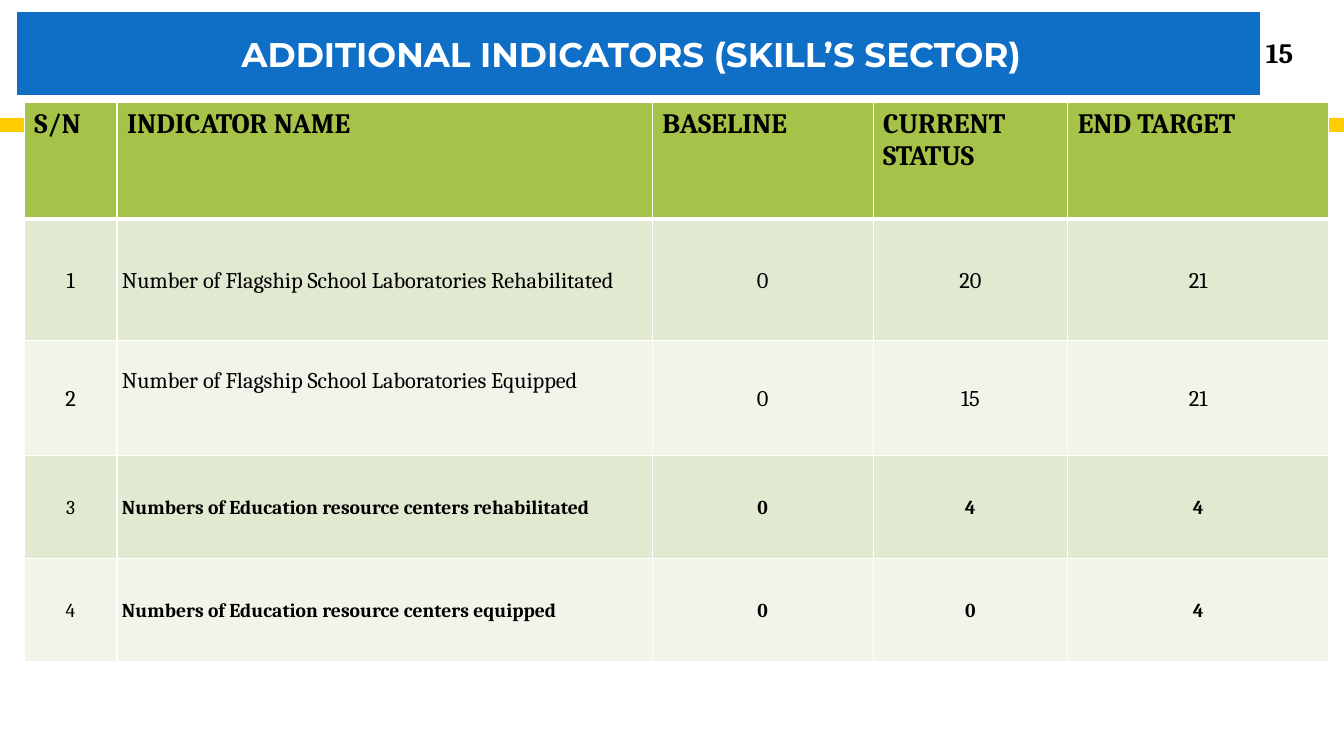
"""Build the additional indicators slide for the skills sector."""
from lxml.etree import SubElement
from pptx import Presentation
from pptx.dml.color import RGBColor
from pptx.enum.shapes import MSO_SHAPE
from pptx.enum.text import MSO_ANCHOR, PP_ALIGN
from pptx.oxml.ns import qn
from pptx.util import Inches, Pt

COLORS = {
    "white": "FFFFFF", "black": "000000", "blue": "0F6FC6", "yellow": "FFCC00",
    "header": "A5C249", "odd": "E1E9D0", "even": "F0F4E9",
}
HEADERS = ["S/N", "INDICATOR NAME", "BASELINE", "CURRENT STATUS", "END TARGET"]
INDICATORS = [
    ("Number of Flagship School Laboratories Rehabilitated", "0", "20", "21"),
    ("Number of Flagship School Laboratories Equipped", "0", "15", "21"),
    ("Numbers of Education resource centers rehabilitated", "0", "4", "4"),
    ("Numbers of Education resource centers equipped", "0", "0", "4"),
]
COLUMN_WIDTHS = [0.92, 5.31, 2.19, 1.93, 2.59]
ROW_HEIGHTS = [1.15, 1.21, 1.14, 1.02, 1.02]
NAME_COLUMN, BASELINE_COLUMN = 1, 2
RAISED_ROW = 2


def color(name):
    return RGBColor.from_string(COLORS[name])


def write_text(text_frame, text, size, font="Cambria", fill="black", bold=True,
               align=PP_ALIGN.CENTER):
    text_frame.text = text
    paragraph = text_frame.paragraphs[0]
    paragraph.alignment = align
    run_font = paragraph.runs[0].font
    run_font.name, run_font.size, run_font.bold = font, Pt(size), bold
    run_font.color.rgb = color(fill)
    return paragraph


def add_bar(slide, left, top, width, height, fill):
    shape = slide.shapes.add_shape(
        MSO_SHAPE.RECTANGLE, Inches(left), Inches(top), Inches(width), Inches(height))
    shape.shadow.inherit = False
    shape.fill.solid()
    shape.fill.fore_color.rgb = color(fill)
    shape.line.fill.background()
    return shape


def add_title(slide):
    bar = add_bar(slide, 0.16, 0.11, 12.34, 0.84, "blue")
    bar.line.color.rgb = color("white")
    bar.line.width = Pt(0.75)
    bar.text_frame.margin_right = Inches(0.24)
    bar.text_frame.vertical_anchor = MSO_ANCHOR.MIDDLE
    write_text(bar.text_frame, "ADDITIONAL INDICATORS (SKILL’S SECTOR)", 24.4,
               "Montserrat", "white")


def add_page_number(slide):
    box = slide.shapes.add_textbox(Inches(12.2), Inches(0.32), Inches(0.98), Inches(0.4))
    box.text_frame.word_wrap = True
    box.text_frame.vertical_anchor = MSO_ANCHOR.MIDDLE
    write_text(box.text_frame, "15", 20)


def style_cell(cell, fill, top_width, bottom_width):
    properties = cell._tc.get_or_add_tcPr()
    sides = {"a:lnL": 1, "a:lnR": 1, "a:lnT": top_width, "a:lnB": bottom_width}
    for tag, width in sides.items():
        line = SubElement(properties, qn(tag), w=str(Pt(width)))
        solid = SubElement(line, qn("a:solidFill"))
        SubElement(solid, qn("a:srgbClr"), val=COLORS["white"])
    cell.fill.solid()
    cell.fill.fore_color.rgb = color(fill)


def fill_body_cell(cell, text, row, column):
    is_name = column == NAME_COLUMN
    cell.vertical_anchor = MSO_ANCHOR.MIDDLE
    cell.margin_left = cell.margin_right = Inches(0.05 if is_name else 0.01)
    cell.margin_top = Inches(0.01)
    cell.margin_bottom = Inches(0.36 if is_name and row == RAISED_ROW else 0)
    paragraph = write_text(
        cell.text_frame, text, 16 if row < 3 else 14, bold=row >= 3 and column > 0,
        align=PP_ALIGN.LEFT if is_name else PP_ALIGN.CENTER)
    paragraph.line_spacing = 1.07
    if column != BASELINE_COLUMN:
        paragraph.space_after = Pt(8)


def add_indicator_table(slide):
    rows = [HEADERS] + [(str(n), *values) for n, values in enumerate(INDICATORS, 1)]
    table = slide.shapes.add_table(
        len(rows), len(HEADERS), Inches(0.24), Inches(1.02),
        Inches(sum(COLUMN_WIDTHS)), Inches(sum(ROW_HEIGHTS))).table
    for column, width in zip(table.columns, COLUMN_WIDTHS):
        column.width = Inches(width)
    for row, height in zip(table.rows, ROW_HEIGHTS):
        row.height = Inches(height)
    for row, values in enumerate(rows):
        for column, text in enumerate(values):
            cell = table.cell(row, column)
            if row == 0:
                style_cell(cell, "header", 1, 3)
                write_text(cell.text_frame, text, 20, align=PP_ALIGN.LEFT)
            else:
                style_cell(cell, "odd" if row % 2 else "even", 3 if row == 1 else 1, 1)
                fill_body_cell(cell, text, row, column)


def main():
    presentation = Presentation()
    presentation.slide_width, presentation.slide_height = Inches(13.33), Inches(7.5)
    slide = presentation.slides.add_slide(presentation.slide_layouts[6])
    add_bar(slide, 0, 1.17, 13.33, 0.14, "yellow")
    add_indicator_table(slide)
    add_page_number(slide)
    add_title(slide)
    presentation.save("out.pptx")


if __name__ == "__main__":
    main()
